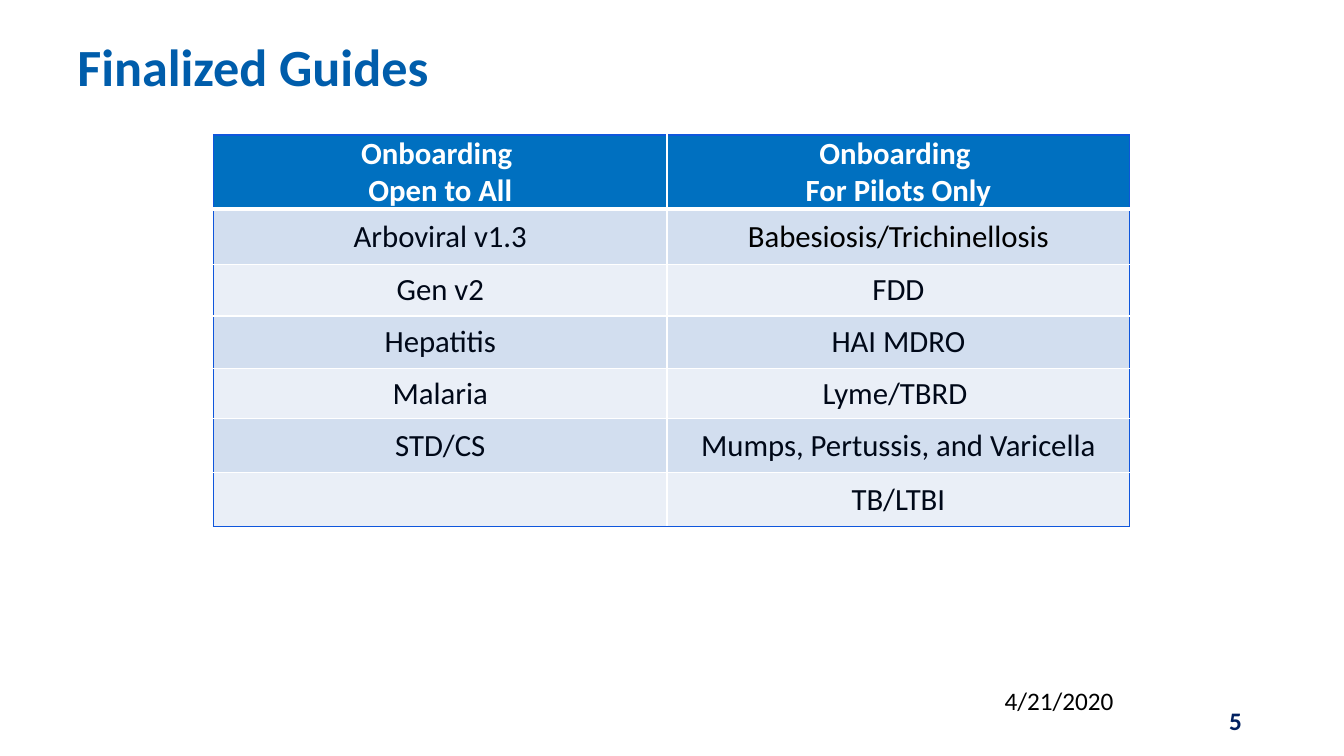
"""Build the Finalized Guides slide."""
from lxml import etree
from pptx import Presentation
from pptx.dml.color import RGBColor
from pptx.enum import text as t
from pptx.oxml.ns import qn
from pptx.util import Cm, Pt

TITLE = "Finalized Guides"
DATE = "4/21/2020"
PAGE = "5"
HEADS = (["Onboarding ", "Open to All"], ["Onboarding ", "For Pilots Only"])
GUIDES = [
    ("Arboviral v1.3", "Babesiosis/Trichinellosis"),
    ("Gen v2", "FDD"),
    ("Hepatitis", "HAI MDRO"),
    ("Malaria", "Lyme/TBRD "),
    ("STD/CS", "Mumps, Pertussis, and Varicella"),
    ("", "TB/LTBI"),
]
WIDTHS = (11.43, 11.66)
HEIGHTS = (1.52, 1.4, 1.3, 1.32, 1.27, 1.35, 1.37)
THEME = dict(
    font="Calibri", title="005DAB", head="0070C0", bands=("D2DEEF", "EAEFF7"),
    edge="0F56DC", white="FFFFFF", ink="000818", black="000000", page="002060",
    big=37.3, body=22, small=18,
)
ALIGN, ANCHOR = t.PP_ALIGN, t.MSO_ANCHOR


def write(frame, lines, size, color, bold=False, align=ALIGN.LEFT):
    for i, line in enumerate(lines):
        para = frame.add_paragraph() if i else frame.paragraphs[0]
        para.alignment = align
        para.font.size = Pt(size)
        if line:
            run = para.add_run()
            run.text = line
            run.font.name = THEME["font"]
            run.font.size = Pt(size)
            run.font.bold = bold
            run.font.color.rgb = RGBColor.from_string(color)


def label(slide, box, line, anchor, *style):
    shape = slide.shapes.add_textbox(*map(Cm, box))
    frame = shape.text_frame
    frame.word_wrap = True
    frame.vertical_anchor = anchor
    write(frame, [line], *style)
    return frame


def border(cell, sides):
    props = cell._tc.get_or_add_tcPr()
    for i, (tag, (color, width)) in enumerate(sides.items()):
        line = etree.Element(qn("a:" + tag), w=str(Pt(width)))
        fill = etree.SubElement(line, qn("a:solidFill"))
        etree.SubElement(fill, qn("a:srgbClr"), val=color)
        props.insert(i, line)


def table(slide):
    rows = [HEADS] + [([a], [b]) for a, b in GUIDES]
    last = len(rows) - 1
    grid = slide.shapes.add_table(
        len(rows), len(WIDTHS), Cm(5.38), Cm(3.4),
        Cm(sum(WIDTHS)), Cm(sum(HEIGHTS))).table
    for col, width in zip(grid.columns, WIDTHS):
        col.width = Cm(width)
    edge, thin, thick = (THEME["edge"], 1), (THEME["white"], 1), (THEME["white"], 3)
    for r, row in enumerate(rows):
        grid.rows[r].height = Cm(HEIGHTS[r])
        head = r == 0
        for c, lines in enumerate(row):
            cell = grid.cell(r, c)
            cell.vertical_anchor = ANCHOR.MIDDLE
            cell.margin_left = cell.margin_right = Cm(0.24)
            cell.margin_top = cell.margin_bottom = 0
            cell.fill.solid()
            fill = THEME["head"] if head else THEME["bands"][(r - 1) % 2]
            cell.fill.fore_color.rgb = RGBColor.from_string(fill)
            ink = "white" if head else "black" if (r, c) == (1, 1) else "ink"
            write(cell.text_frame, lines, THEME["body"], THEME[ink], head, ALIGN.CENTER)
            border(cell, {
                "lnL": thin if c else edge,
                "lnR": edge if c else thin,
                "lnT": edge if head else thick if r == 1 else thin,
                "lnB": thick if head else edge if r == last else thin,
            })


def main():
    deck = Presentation()
    deck.slide_width, deck.slide_height = Cm(33.87), Cm(19.05)
    slide = deck.slides.add_slide(deck.slide_layouts[6])
    title = label(slide, (1.7, 0.76, 30.48, 1.8), TITLE, ANCHOR.BOTTOM,
                  THEME["big"], THEME["title"], True)
    title.paragraphs[0].line_spacing = Pt(40)
    table(slide)
    label(slide, (23.93, 17.65, 7.62, 1.02), PAGE, ANCHOR.MIDDLE,
          THEME["small"], THEME["page"], True, ALIGN.RIGHT)
    label(slide, (25.07, 17.15, 4.27, 1.02), DATE, ANCHOR.TOP,
          THEME["small"], THEME["black"])
    deck.save("out.pptx")


if __name__ == "__main__":
    main()
